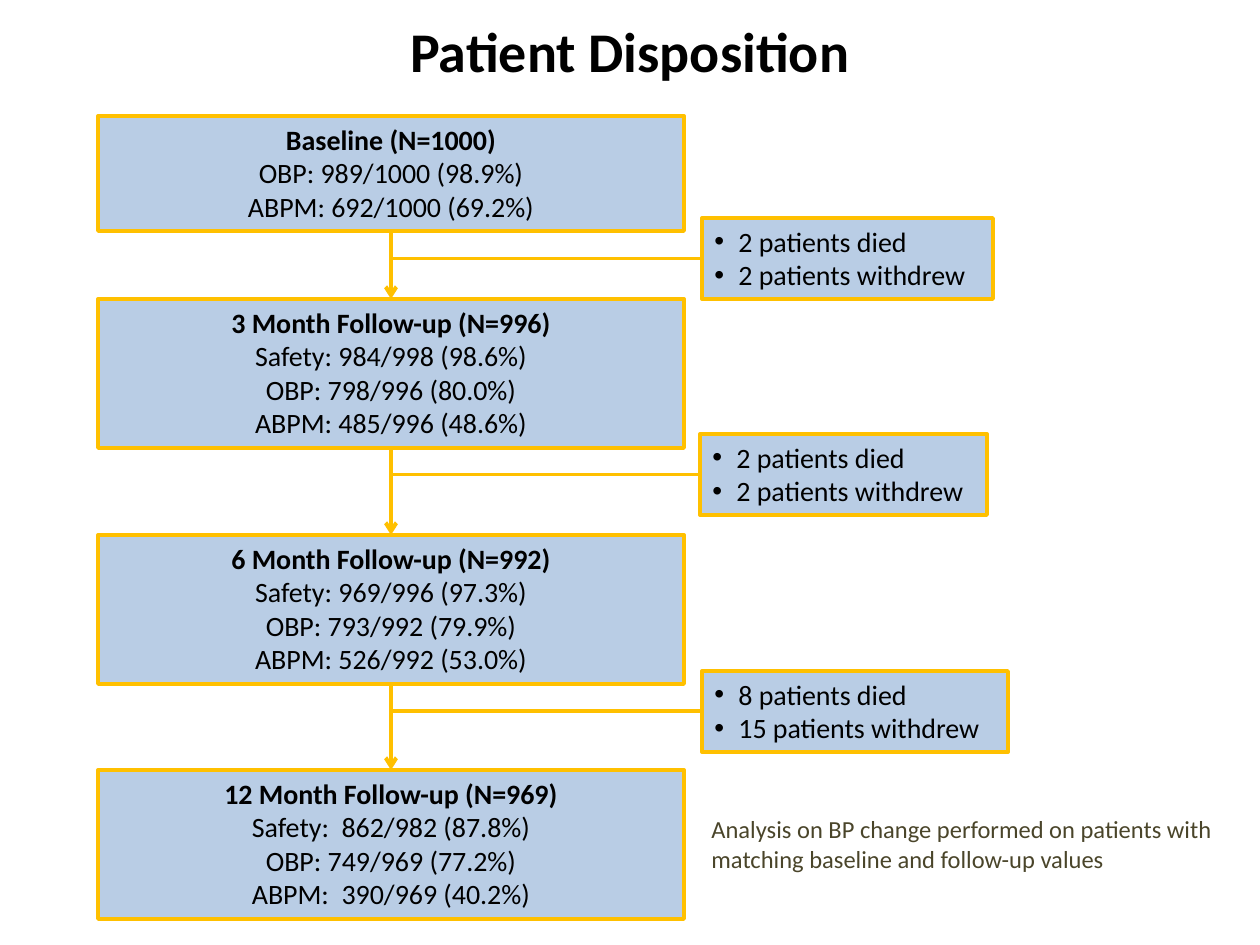
from lxml.etree import SubElement as Sub
from pptx import Presentation
from pptx.dml.color import RGBColor
from pptx.enum.shapes import MSO_CONNECTOR as Conn, MSO_SHAPE as Shape
from pptx.enum.text import MSO_ANCHOR as Anchor, PP_ALIGN as Align
from pptx.oxml.ns import qn
from pptx.util import Emu, Pt

BLUE = RGBColor(0xB9, 0xCD, 0xE5)
GOLD = RGBColor(0xFF, 0xC0, 0x00)
BLACK = RGBColor(0, 0, 0)
OLIVE = RGBColor(0x4A, 0x45, 0x2A)

TITLE = "Patient Disposition"
NOTE = ("Analysis on BP change performed on patients with "
        "matching baseline and follow-up values")
STAGES = [
    (116, 115, ["Baseline (N=1000)", "OBP: 989/1000 (98.9%)",
                "ABPM: 692/1000 (69.2%)"]),
    (299, 149, ["3 Month Follow-up (N=996)", "Safety: 984/998 (98.6%)",
                "OBP: 798/996 (80.0%)", "ABPM: 485/996 (48.6%)"]),
    (535, 149, ["6 Month Follow-up (N=992)", "Safety: 969/996 (97.3%)",
                "OBP: 793/992 (79.9%)", "ABPM: 526/992 (53.0%)"]),
    (770, 149, ["12 Month Follow-up (N=969)", "Safety:  862/982 (87.8%)",
                "OBP: 749/969 (77.2%)", "ABPM:  390/969 (40.2%)"]),
]
LOSSES = [
    (702, 218, 291, ["2 patients died", "2 patients withdrew"]),
    (700, 434, 287, ["2 patients died", "2 patients withdrew"]),
    (702, 671, 306, ["8 patients died", "15 patients withdrew"]),
]
LEFT, WIDE, TALL = 98, 586, 81
MID = LEFT + WIDE // 2


def px(n):
    """Turn pixels into EMU."""
    return Emu(round(n * 914400 / 126))


def write(shape, lines, size, color=BLACK, align=Align.LEFT, bold=0):
    """Fill a shape with lines, the first few of them bold."""
    frame = shape.text_frame
    frame.word_wrap = True
    frame.text = "\n".join(lines)
    for i, para in enumerate(frame.paragraphs):
        para.alignment = align
        font = para.font
        font.name, font.size, font.bold = "Calibri", Pt(size), i < bold
        font.color.rgb = color
    return frame


def box(slide, x, y, w, h):
    """Add a blue box with a gold edge."""
    shape = slide.shapes.add_shape(Shape.RECTANGLE, *map(px, (x, y, w, h)))
    shape.shadow.inherit = False
    shape.fill.solid()
    shape.fill.fore_color.rgb = BLUE
    shape.line.color.rgb = GOLD
    shape.line.width = Pt(2.25)
    return shape


def link(slide, x1, y1, x2, y2, arrow=False):
    """Add a gold line, with an arrowhead if asked."""
    line = slide.shapes.add_connector(
        Conn.STRAIGHT, *map(px, (x1, y1, x2, y2)))
    line.line.color.rgb = GOLD
    line.line.width = Pt(2.25)
    props = line._element.spPr
    if arrow:
        Sub(props.find(qn("a:ln")), qn("a:tailEnd"), type="arrow")
    Sub(props, qn("a:effectLst"))


def label(slide, x, y, w, h):
    """Add an empty text box."""
    return slide.shapes.add_textbox(*map(px, (x, y, w, h)))


def bullet(para):
    """Give a paragraph a hanging bullet."""
    props = para._p.get_or_add_pPr()
    props.set("marL", str(px(24)))
    props.set("indent", str(-px(24)))
    mark = props.makeelement(qn("a:buChar"), {"char": "•"})
    font = props.makeelement(qn("a:buFont"), {"typeface": "Arial"})
    props.insert(0, font)
    props.insert(1, mark)


def main():
    """Build the slide."""
    deck = Presentation()
    deck.slide_width, deck.slide_height = px(1260), px(945)
    slide = deck.slides.add_slide(deck.slide_layouts[6])
    write(label(slide, 63, 10, 1134, 84), [TITLE], 32,
          align=Align.CENTER, bold=1)
    for (top, high, _), (end, _, _) in zip(STAGES, STAGES[1:]):
        link(slide, MID, top + high, MID, end, arrow=True)
    for x, y, w, lines in LOSSES:
        link(slide, MID, y + TALL / 2, x, y + TALL / 2)
        frame = write(box(slide, x, y, w, TALL), lines, 16)
        frame.vertical_anchor = Anchor.TOP
        for para in frame.paragraphs:
            bullet(para)
    for y, h, lines in STAGES:
        frame = write(box(slide, LEFT, y, WIDE, h), lines, 16,
                      align=Align.CENTER, bold=1)
        frame.vertical_anchor = Anchor.TOP
    write(label(slide, 699, 808, 538, 72), [NOTE], 14, OLIVE)
    deck.save("out.pptx")


if __name__ == "__main__":
    main()
